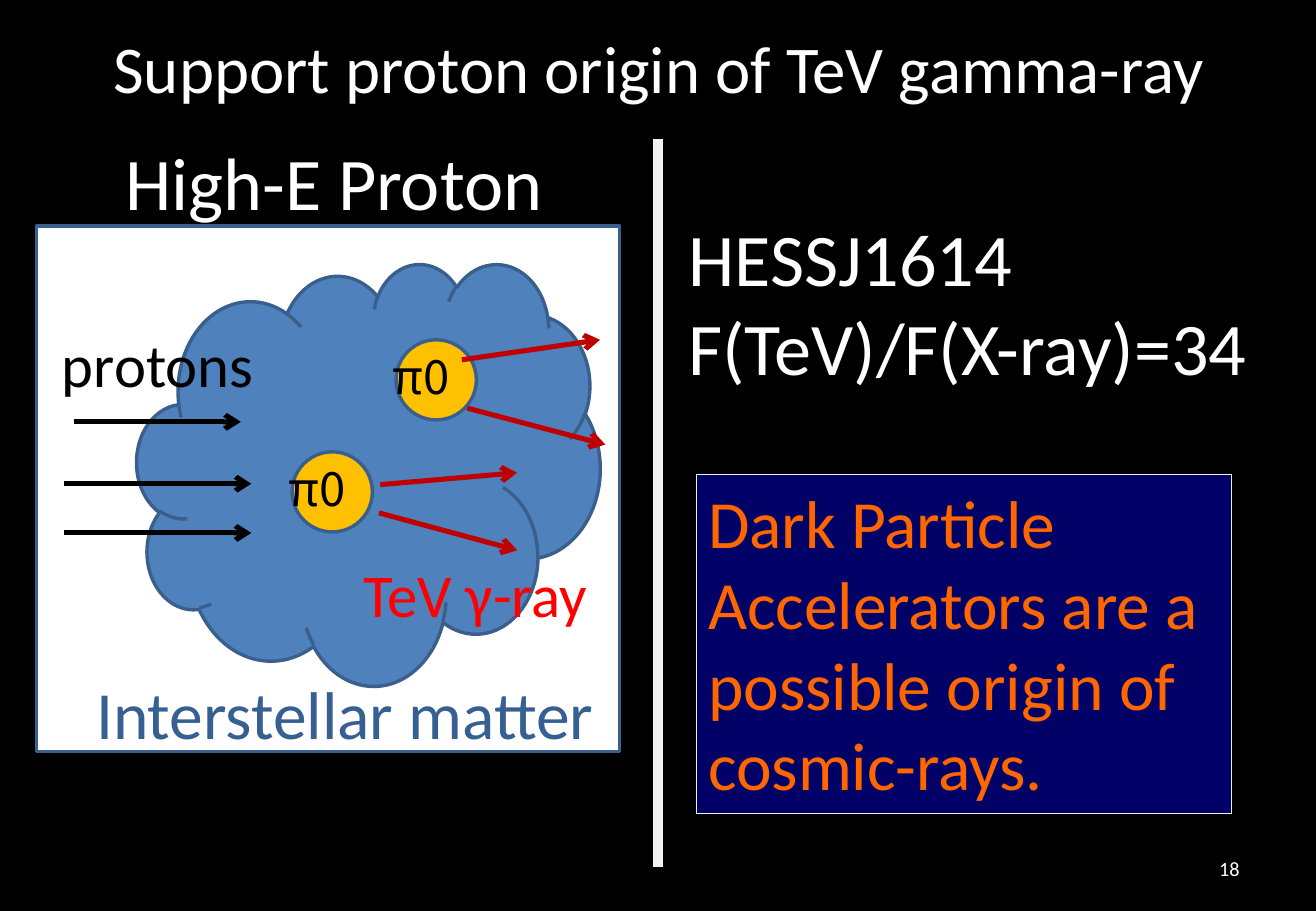
from dataclasses import dataclass

from lxml.etree import SubElement
from pptx import Presentation
from pptx.dml.color import RGBColor
from pptx.enum.shapes import MSO_CONNECTOR as Link, MSO_SHAPE as Kind
from pptx.enum.text import MSO_ANCHOR as Anchor, PP_ALIGN as Align
from pptx.oxml.ns import qn
from pptx.shapes.autoshape import Shape
from pptx.shapes.shapetree import _BaseGroupShapes as Tree
from pptx.util import Inches, Pt

WIDTH, HEIGHT = Inches(10.83), Inches(7.5)
LATIN, ASIAN = "Calibri", "Noto Sans CJK JP"
COLORS = {
    "black": "000000", "white": "FFFFFF", "pale": "F2F2F2", "navy": "000066",
    "cloud": "4F81BD", "edge": "3A5F8C", "gold": "FFC000", "ray": "C00000",
    "red": "FF0000", "blue": "376092", "orange": "FF6600",
}


@dataclass
class Box:
    """Left, top, width and height in percent of the slide."""
    x: float
    y: float
    w: float
    h: float


@dataclass
class Label:
    text: str
    box: Box
    size: float
    color: str = "white"
    font: str = LATIN
    align: Align = Align.LEFT
    anchor: Anchor = Anchor.TOP
    wrap: bool = False


@dataclass
class Line:
    """Ends in percent of the slide."""
    x1: float
    y1: float
    x2: float
    y2: float
    color: str
    width: float = 3
    arrow: bool = True


@dataclass
class Pion:
    x: float
    y: float
    rays: list[Line]


TITLE = Label("Support proton origin of TeV gamma-ray", Box(5, 1.7, 90.1, 11.3),
              39.6, align=Align.CENTER, anchor=Anchor.MIDDLE, wrap=True)
NUMBER = Label("18", Box(71.7, 92.7, 23.4, 5.3), 12,
               align=Align.RIGHT, anchor=Anchor.MIDDLE, wrap=True)
PANEL = Box(2.8, 24.8, 44.3, 57.7)
CLOUD = Box(10.4, 28.9, 35.2, 46.3)
PROTONS = [
    Line(4.9, 58.5, 19.1, 58.5, "black"),
    Line(5.6, 46.3, 18.3, 46.3, "black"),
    Line(4.9, 53.1, 19.1, 53.1, "black"),
]
PIONS = [
    Pion(22.2, 49.6, [Line(28.8, 56.3, 39.3, 60.4, "ray"),
                      Line(28.9, 53.2, 39.3, 51.9, "ray")]),
    Pion(30.1, 37.3, [Line(35.5, 44.8, 46, 48.8, "ray"),
                      Line(35.1, 39.5, 45.6, 37.3, "ray")]),
]
LABELS = [
    Label("High-E Proton", Box(8.6, 14.3, 34, 11.2), 44),
    Label("protons", Box(3.8, 35.2, 16.5, 9.5), 36, "black"),
    Label("TeV γ-ray", Box(26.7, 60.5, 19, 9.5), 36, "red"),
    Label("Interstellar matter", Box(6.4, 73.1, 40.2, 10.3), 40, "blue"),
    Label("HESSJ1614\nF(TeV)/F(X-ray)=34", Box(51.4, 22.7, 47.6, 21.1), 44),
]
DIVIDER = Line(50, 15.3, 50, 95.2, "pale", 6, False)
CLAIM = Label("Dark Particle Accelerators are a possible origin of cosmic-rays.",
              Box(52.9, 52.1, 40.7, 37.2), 40, "orange", wrap=True)


def rgb(name: str) -> RGBColor:
    return RGBColor.from_string(COLORS[name])


def across(share: float) -> int:
    return round(WIDTH * share / 100)


def down(share: float) -> int:
    return round(HEIGHT * share / 100)


def place(box: Box) -> tuple[int, int, int, int]:
    return across(box.x), down(box.y), across(box.w), down(box.h)


def write(shape: Shape, label: Label) -> None:
    frame = shape.text_frame
    frame.text = label.text
    frame.word_wrap = label.wrap
    frame.vertical_anchor = label.anchor
    for para in frame.paragraphs:
        para.alignment = label.align
        for run in para.runs:
            run.font.name = label.font
            run.font.size = Pt(label.size)
            run.font.color.rgb = rgb(label.color)


def add_label(tree: Tree, label: Label) -> None:
    write(tree.add_textbox(*place(label.box)), label)


def add_form(tree: Tree, kind: Kind, box: Box, fill: str,
             edge: str = "edge", width: float = 2) -> Shape:
    shape = tree.add_shape(kind, *place(box))
    shape.shadow.inherit = False
    shape.fill.solid()
    shape.fill.fore_color.rgb = rgb(fill)
    shape.line.color.rgb = rgb(edge)
    shape.line.width = Pt(width)
    return shape


def add_line(tree: Tree, line: Line) -> None:
    link = tree.add_connector(Link.STRAIGHT, across(line.x1), down(line.y1),
                              across(line.x2), down(line.y2))
    link.line.color.rgb = rgb(line.color)
    link.line.width = Pt(line.width)
    if line.arrow:
        SubElement(link.line._get_or_add_ln(), qn("a:tailEnd"), type="arrow")
    SubElement(link._element.spPr, qn("a:effectLst"))


def add_pion(tree: Tree, pion: Pion) -> None:
    """Draw a pion with its name as one group, then its two gamma rays."""
    group = tree.add_group_shape().shapes
    add_form(group, Kind.OVAL, Box(pion.x, pion.y, 6.1, 8.8), "gold")
    spot = Box(pion.x - 1.2, pion.y + 0.2, 7.4, 7.6)
    add_label(group, Label("π0", spot, 28, "black", ASIAN, wrap=True))
    for ray in pion.rays:
        add_line(tree, ray)


def main() -> None:
    deck = Presentation()
    deck.slide_width, deck.slide_height = WIDTH, HEIGHT
    slide = deck.slides.add_slide(deck.slide_layouts[6])
    slide.background.fill.solid()
    slide.background.fill.fore_color.rgb = rgb("black")
    tree = slide.shapes

    add_label(tree, TITLE)
    add_label(tree, NUMBER)
    add_form(tree, Kind.RECTANGLE, PANEL, "white")
    add_form(tree, Kind.CLOUD, CLOUD, "cloud")
    for proton in PROTONS:
        add_line(tree, proton)
    for pion in PIONS:
        add_pion(tree, pion)
    for label in LABELS:
        add_label(tree, label)
    add_line(tree, DIVIDER)
    write(add_form(tree, Kind.RECTANGLE, CLAIM.box, "navy", "pale", 0.75), CLAIM)
    deck.save("out.pptx")


if __name__ == "__main__":
    main()
